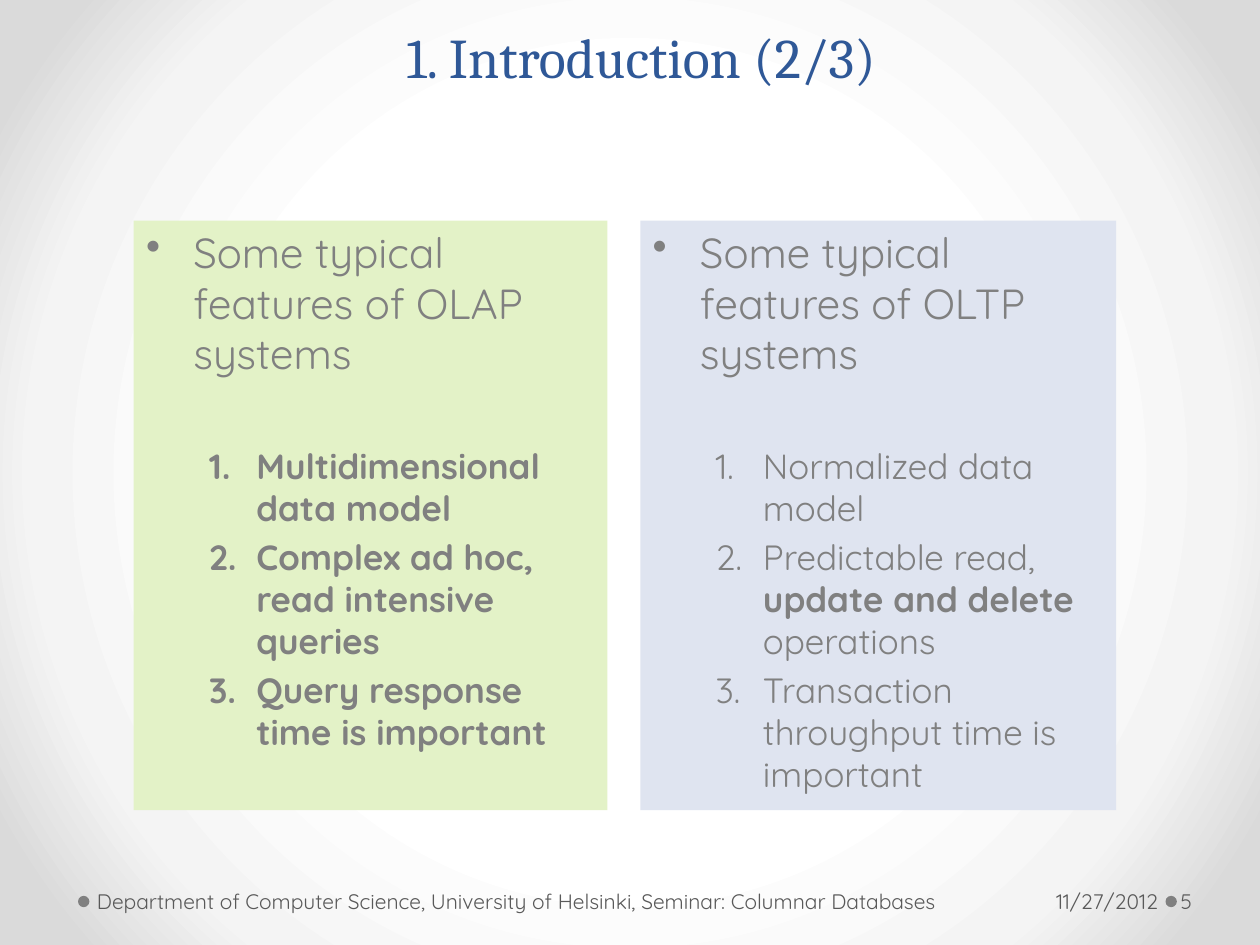
from dataclasses import dataclass

from lxml import etree
from pptx import Presentation
from pptx.dml.color import RGBColor
from pptx.enum.shapes import MSO_SHAPE
from pptx.enum.text import MSO_ANCHOR, PP_ALIGN
from pptx.oxml import parse_xml
from pptx.oxml.ns import nsdecls, qn
from pptx.util import Pt

OVAL, RECTANGLE = MSO_SHAPE.OVAL, MSO_SHAPE.RECTANGLE
TOP, MIDDLE, BOTTOM = MSO_ANCHOR.TOP, MSO_ANCHOR.MIDDLE, MSO_ANCHOR.BOTTOM
LEFT, CENTER, RIGHT = PP_ALIGN.LEFT, PP_ALIGN.CENTER, PP_ALIGN.RIGHT


@dataclass(frozen=True)
class Theme:
    title_font: str = "Cambria"
    body_font: str = "Quicksand"
    title_color: str = "2F5897"
    body_color: str = "808080"
    footer_color: str = "595959"
    olap_fill: str = "E3F2C7"
    oltp_fill: str = "DFE4F0"
    backdrop: tuple = ((50, "FFFFFF"), (76, "F4F4F4"), (92, "DADADA"))
    title_size: int = 32
    heading_size: int = 24
    item_size: int = 20
    footer_size: int = 12


THEME = Theme()
PANEL_TOP, PANEL_HEIGHT = 126, 337
FOOTER_TOP, FOOTER_HEIGHT = 500.4, 28.8
DOT_TOP, DOT_SIZE = 511.9, 6.5


def apply_format(target, values):
    for attribute, value in values.items():
        setattr(target, attribute, value)


def paint_backdrop(slide):
    """Fill the background with a gradient that darkens from the centre."""
    stops = "".join(
        f'<a:gs pos="{percent * 1000}"><a:srgbClr val="{color}"/></a:gs>'
        for percent, color in THEME.backdrop
    )
    slide.background.fill.solid()
    properties = slide.element.find(".//" + qn("p:bgPr"))
    gradient = parse_xml(
        f'<a:gradFill {nsdecls("a")} rotWithShape="1"><a:gsLst>{stops}</a:gsLst>'
        '<a:path path="circle"><a:fillToRect l="50000" t="50000" r="50000" b="50000"/>'
        "</a:path></a:gradFill>"
    )
    properties.replace(properties.find(qn("a:solidFill")), gradient)


def add_run(paragraph, text, font, size, color, bold=False):
    run = paragraph.add_run()
    run.text = text
    apply_format(run.font, {"name": font, "size": Pt(size), "bold": bold})
    run.font.color.rgb = RGBColor.from_string(color)


def add_filled_shape(slide, preset, box, color):
    shape = slide.shapes.add_shape(preset, *map(Pt, box))
    shape.shadow.inherit = False
    shape.fill.solid()
    shape.fill.fore_color.rgb = RGBColor.from_string(color)
    shape.line.fill.background()
    return shape


def set_list_style(paragraph, indent, marker, **attributes):
    """Give a paragraph a hanging indent and a bullet or number."""
    properties = paragraph._p.get_or_add_pPr()
    properties.set("marL", str(Pt(indent)))
    properties.set("indent", str(-Pt(27)))
    etree.SubElement(properties, qn(marker), **attributes)


def add_label(slide, box, anchor, side_margins, alignment):
    """Add an empty text box and return its paragraph."""
    frame = slide.shapes.add_textbox(*map(Pt, box)).text_frame
    left, right = side_margins
    apply_format(frame, {
        "word_wrap": True,
        "vertical_anchor": anchor,
        "margin_left": Pt(left),
        "margin_right": Pt(right),
    })
    paragraph = frame.paragraphs[0]
    paragraph.alignment = alignment
    return paragraph


def add_title(slide, text):
    paragraph = add_label(slide, (42.5, 3.6, 648, 51.1), BOTTOM, (7.2, 7.2), CENTER)
    paragraph.line_spacing = Pt(58)
    add_run(paragraph, text, THEME.title_font, THEME.title_size, THEME.title_color)


def add_footer(slide, text, left, width, side_margins, alignment=LEFT):
    box = (left, FOOTER_TOP, width, FOOTER_HEIGHT)
    paragraph = add_label(slide, box, MIDDLE, side_margins, alignment)
    add_run(paragraph, text, THEME.body_font, THEME.footer_size, THEME.footer_color)


def add_panel(slide, left, width, color, heading, items):
    """Add a feature panel; each item is a list of (text, bold) pieces."""
    box = (left, PANEL_TOP, width, PANEL_HEIGHT)
    frame = add_filled_shape(slide, RECTANGLE, box, color).text_frame
    apply_format(frame, {"word_wrap": True, "vertical_anchor": TOP})

    headline = frame.paragraphs[0]
    apply_format(headline, {"alignment": LEFT, "space_after": Pt(34)})
    set_list_style(headline, 27, "a:buChar", char="•")
    add_run(headline, heading, THEME.body_font, THEME.heading_size, THEME.body_color)

    for pieces in items:
        feature = frame.add_paragraph()
        apply_format(feature, {"alignment": LEFT, "level": 1, "space_before": Pt(4)})
        set_list_style(feature, 63, "a:buAutoNum", type="arabicPeriod")
        for text, bold in pieces:
            add_run(feature, text, THEME.body_font, THEME.item_size,
                    THEME.body_color, bold)


def main():
    presentation = Presentation()
    apply_format(presentation, {"slide_width": Pt(720), "slide_height": Pt(540)})
    slide = presentation.slides.add_slide(presentation.slide_layouts[6])
    paint_backdrop(slide)

    for dot_left in (666, 44.6):
        add_filled_shape(slide, OVAL, (dot_left, DOT_TOP, DOT_SIZE, DOT_SIZE),
                         THEME.body_color)

    add_title(slide, "1. Introduction (2/3)")
    add_panel(slide, 365.9, 272, THEME.oltp_fill,
              "Some typical features of OLTP systems", [
                  [("Normalized data model", False)],
                  [("Predictable read, ", False), ("update and delete ", True),
                   ("operations", False)],
                  [("Transaction throughput time is important", False)],
              ])
    add_footer(slide, "11/27/2012", 586.8, 78.5, (7.2, 3.6), RIGHT)
    add_footer(
        slide,
        "Department of Computer Science, University of Helsinki, "
        "Seminar: Columnar Databases",
        51.8, 523.4, (3.6, 7.2),
    )
    add_footer(slide, "5", 672.5, 43.9, (2.2, 3.6))
    add_panel(slide, 76.4, 270.7, THEME.olap_fill,
              "Some typical features of OLAP systems", [
                  [("Multidimensional data model", True)],
                  [("Complex ad hoc, read intensive queries", True)],
                  [("Query response time is important", True)],
              ])
    presentation.save("out.pptx")


if __name__ == "__main__":
    main()
